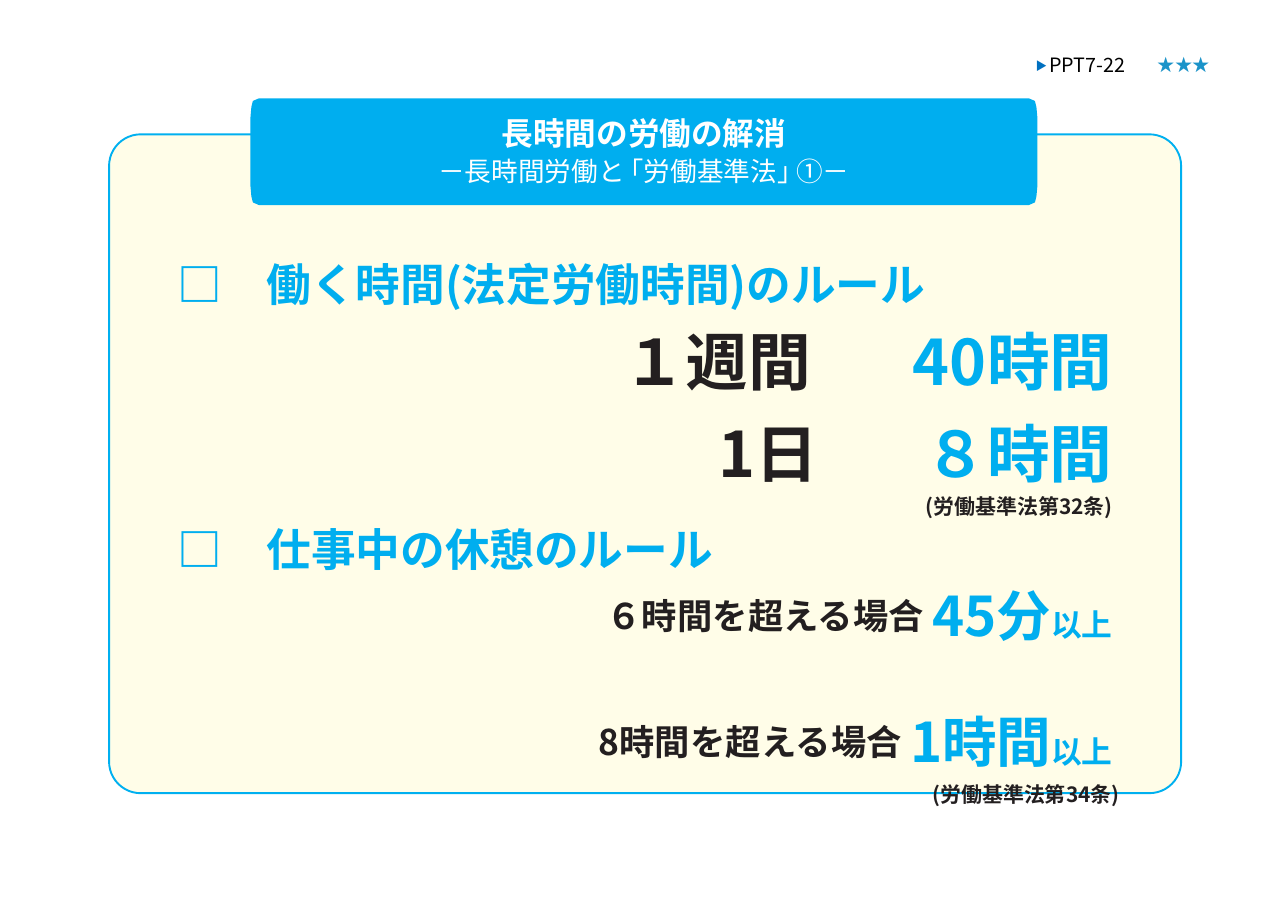
from dataclasses import dataclass

from lxml import etree
from pptx import Presentation
from pptx.dml.color import RGBColor
from pptx.enum.shapes import MSO_SHAPE
from pptx.enum.text import MSO_ANCHOR, MSO_AUTO_SIZE, PP_ALIGN
from pptx.oxml.ns import qn
from pptx.util import Pt

LEFT, CENTER, RIGHT = PP_ALIGN.LEFT, PP_ALIGN.CENTER, PP_ALIGN.RIGHT
TOP = MSO_ANCHOR.TOP
FIT_SHAPE, NO_FIT = MSO_AUTO_SIZE.SHAPE_TO_FIT_TEXT, MSO_AUTO_SIZE.NONE
ROUNDED = MSO_SHAPE.ROUNDED_RECTANGLE

FONT = "Noto Sans CJK JP"
CYAN, INK, WHITE, CREAM = "00AEEF", "231F20", "FFFFFF", "FFFDE8"
BORDER, MARKER, STAR, BLACK = "00B0F0", "0070C0", "1B93C9", "000000"


@dataclass(frozen=True)
class Run:
    text: str
    size: float
    color: str
    bold: bool = False
    baseline: int = 0


@dataclass(frozen=True)
class Line:
    runs: tuple[Run, ...]
    align: PP_ALIGN = LEFT
    before: float = 0
    spacing: float | None = None
    tab: float | None = None
    right: float = 0


@dataclass(frozen=True)
class Box:
    left: float
    top: float
    width: float
    height: float


PANEL = Box(71.3, 87.8, 700.6, 430.6)
BANNER = Box(163.6, 64.3, 514.4, 69.7)
TITLE = Box(163.6, 70.6, 514.4, 51.8)
RULES = Box(115.9, 159.1, 619.2, 349.2)
CODE = Box(676.8, 33.1, 78.5, 16.6)
RATING = Box(749.5, 31.7, 49, 20.9)
BANNER_CORNER = [(13.3, 0), (5.6, 0), (1.7, 1.7), (0.7, 5.6), (0, 13.3)]


def heading(text: str, **layout: float) -> Line:
    return Line((Run(text, 29.2, CYAN, True),), **layout)


def limit(period: str, hours: str, **layout: float) -> Line:
    runs = (Run(f"{period}\t", 41, INK, True), Run(hours, 41, CYAN, True))
    return Line(runs, RIGHT, right=8, **layout)


def rest(condition: str, length: str, drop: int, **layout: float) -> Line:
    runs = (
        Run(f"{condition} ", 23.1, INK, True),
        Run(length, 61.5, CYAN, True, -drop),
        Run("以上", 34.6, CYAN, True, -2 * drop),
    )
    return Line(runs, RIGHT, right=8, **layout)


def article(text: str, **layout: float) -> Line:
    return Line((Run(text, 13.7, INK, True),), RIGHT, **layout)


TITLE_LINES = [
    Line((Run("長時間の労働の解消", 20.7, WHITE, True),), CENTER, 3.7),
    Line((Run("－長時間労働と ｢労働基準法｣ ①－", 17.4, WHITE),), CENTER, 2.2),
]
RULE_LINES = [
    heading("□　働く時間(法定労働時間)のルール", before=9),
    limit("１週間", "40時間", before=9.3, spacing=48.2, tab=189.4),
    limit("1日", "８時間", before=11.1, tab=134.6),
    article("(労働基準法第32条)", before=3, spacing=15.4),
    heading("□　仕事中の休憩のルール", before=3.9, spacing=33.4),
    rest("６時間を超える場合", "45分", 7, spacing=47.5),
    rest("8時間を超える場合", "1時間", 8, before=8.3),
    article("(労働基準法第34条)", before=5, right=3.5),
]
CODE_LINES = [
    Line((Run("▶ ", 12.9, MARKER, baseline=9), Run("PPT7-22", 12.9, BLACK)), before=1.1),
]
RATING_LINES = [Line((Run("★★★", 11.3, STAR),))]


def rgb(color: str) -> RGBColor:
    return RGBColor.from_string(color)


def place(shape, box: Box) -> None:
    shape.left, shape.top = Pt(box.left), Pt(box.top)
    shape.width, shape.height = Pt(box.width), Pt(box.height)


def add_run(paragraph, text: str, *, size: float, color: str, bold: bool, baseline: int) -> None:
    run = paragraph.add_run()
    run.text = text
    run.font.size = Pt(size)
    run.font.bold = bold
    run.font.color.rgb = rgb(color)
    run.font.name = FONT
    properties = run._r.get_or_add_rPr()
    etree.SubElement(properties, qn("a:ea"), typeface=FONT)
    if baseline:
        properties.set("baseline", str(baseline * 1000))


def write_text(shape, lines: list[Line], *, inset: float = 0, side: float = 0,
               wrap: bool = True, fit: MSO_AUTO_SIZE = FIT_SHAPE) -> None:
    frame = shape.text_frame
    frame.word_wrap = wrap
    frame.auto_size = fit
    frame.vertical_anchor = TOP
    frame.margin_left = frame.margin_right = Pt(side)
    frame.margin_top, frame.margin_bottom = Pt(inset), Pt(0)
    for index, line in enumerate(lines):
        paragraph = frame.add_paragraph() if index else frame.paragraphs[0]
        paragraph.alignment = line.align
        paragraph.space_before = Pt(line.before)
        if line.spacing:
            paragraph.line_spacing = Pt(line.spacing)
        properties = paragraph._p.get_or_add_pPr()
        if line.right:
            properties.set("marR", str(Pt(line.right)))
        if line.tab:
            tabs = etree.SubElement(properties, qn("a:tabLst"))
            etree.SubElement(tabs, qn("a:tab"), pos=str(Pt(line.tab)), algn="l")
        for run in line.runs:
            add_run(paragraph, run.text, size=run.size, color=run.color,
                    bold=run.bold, baseline=run.baseline)


def add_text_box(slide, box: Box, lines: list[Line], **layout) -> None:
    shape = slide.shapes.add_textbox(0, 0, 0, 0)
    place(shape, box)
    write_text(shape, lines, **layout)


def add_panel(slide) -> None:
    panel = slide.shapes.add_shape(ROUNDED, 0, 0, 0, 0)
    place(panel, PANEL)
    panel.adjustments[0] = 0.048
    panel.shadow.inherit = False
    panel.fill.solid()
    panel.fill.fore_color.rgb = rgb(CREAM)
    panel.line.color.rgb = rgb(BORDER)
    panel.line.width = Pt(1.25)


def add_banner(slide) -> None:
    right, bottom = BANNER.left + BANNER.width, BANNER.top + BANNER.height
    reverse = BANNER_CORNER[::-1]
    outline = [(BANNER.left + x, BANNER.top + y) for x, y in BANNER_CORNER]
    outline += [(BANNER.left + x, bottom - y) for x, y in reverse]
    outline += [(right - x, bottom - y) for x, y in BANNER_CORNER]
    outline += [(right - x, BANNER.top + y) for x, y in reverse]
    points = [(Pt(x), Pt(y)) for x, y in outline]
    builder = slide.shapes.build_freeform(*points[0])
    builder.add_line_segments(points[1:], close=True)
    banner = builder.convert_to_shape()
    banner.shadow.inherit = False
    banner.fill.solid()
    banner.fill.fore_color.rgb = rgb(CYAN)
    banner.line.fill.background()


def main() -> None:
    presentation = Presentation()
    presentation.slide_width, presentation.slide_height = Pt(841.7), Pt(595.4)
    slide = presentation.slides.add_slide(presentation.slide_layouts[5])
    add_panel(slide)
    add_banner(slide)
    title = slide.shapes.title
    title.element.getparent().append(title.element)
    place(title, TITLE)
    write_text(title, TITLE_LINES, inset=3.6, fit=NO_FIT)
    add_text_box(slide, RULES, RULE_LINES, inset=8.6)
    add_text_box(slide, CODE, CODE_LINES, inset=1.4)
    add_text_box(slide, RATING, RATING_LINES, inset=3.6, side=7.2, wrap=False)
    presentation.save("out.pptx")


if __name__ == "__main__":
    main()
